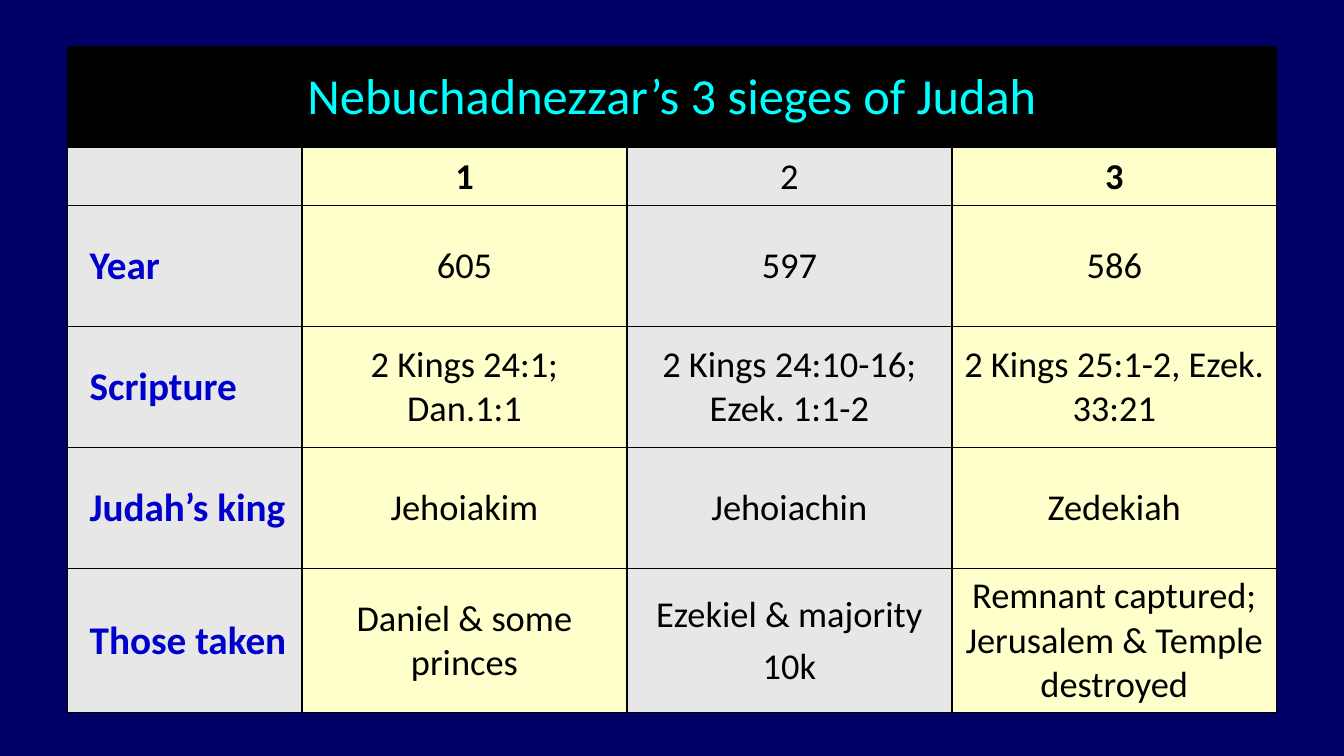
from dataclasses import dataclass

from lxml import etree
from pptx import Presentation
from pptx import util as u
from pptx.dml.color import RGBColor
from pptx.enum import text
from pptx.oxml import ns


@dataclass(frozen=True)
class Theme:
    """Colours, font and type sizes of the slide."""
    font: str = "Calibri"
    background: str = "000066"
    title_fill: str = "000000"
    title_ink: str = "00FFFF"
    grey: str = "E7E7E7"
    cream: str = "FFFFCC"
    label_ink: str = "0000CC"
    ink: str = "000000"
    border: str = "000000"
    title_size: int = 36
    label_size: int = 28
    body_size: int = 26


THEME = Theme()
TITLE = "Nebuchadnezzar’s 3 sieges of Judah"
SIEGES = [
    ("", "1", "2", "3"),
    ("Year", "605", "597", "586"),
    ("Scripture", "2 Kings 24:1; Dan.1:1", "2 Kings 24:10-16; Ezek. 1:1-2",
     "2 Kings 25:1-2, Ezek. 33:21"),
    ("Judah’s king", "Jehoiakim", "Jehoiachin", "Zedekiah"),
    ("Those taken", "Daniel & some princes", "Ezekiel & majority\n10k",
     "Remnant captured; Jerusalem & Temple destroyed"),
]
ROW_HEIGHTS = [2.54, 1.46, 3.05, 3.05, 3.05, 3.63]
LABEL_SHARE = 0.194


def draw_borders(cell):
    """Rule all four sides of a cell with a thin line."""
    properties = cell._tc.get_or_add_tcPr()
    for position, side in enumerate(("lnL", "lnR", "lnT", "lnB")):
        line = etree.Element(ns.qn(f"a:{side}"), w=str(u.Pt(1)))
        fill = etree.SubElement(line, ns.qn("a:solidFill"))
        etree.SubElement(fill, ns.qn("a:srgbClr"), val=THEME.border)
        properties.insert(position, line)


def fill_cell(cell, words, fill, ink, size, bold=False, align=text.PP_ALIGN.CENTER):
    """Write and style the words of one cell."""
    cell.fill.solid()
    cell.fill.fore_color.rgb = RGBColor.from_string(fill)
    cell.vertical_anchor = text.MSO_ANCHOR.MIDDLE
    cell.text = words
    for paragraph in cell.text_frame.paragraphs:
        paragraph.alignment = align
        paragraph.space_before = u.Pt(size * 0.2)
        paragraph.font.name = THEME.font
        paragraph.font.size = u.Pt(size)
        paragraph.font.bold = bold
        paragraph.font.color.rgb = RGBColor.from_string(ink)
    draw_borders(cell)


def add_siege_table(slide, left, top, width):
    """Place the titled table of sieges in the given box."""
    columns = len(SIEGES[0])
    table = slide.shapes.add_table(
        len(ROW_HEIGHTS), columns, u.Cm(left), u.Cm(top),
        u.Cm(width), u.Cm(sum(ROW_HEIGHTS))).table
    table.first_row = table.horz_banding = False
    label_width = width * LABEL_SHARE
    siege_width = (width - label_width) / (columns - 1)
    for index, column in enumerate(table.columns):
        column.width = u.Cm(siege_width if index else label_width)
    for row, height in zip(table.rows, ROW_HEIGHTS):
        row.height = u.Cm(height)

    for column in range(columns):
        fill_cell(table.cell(0, column), "" if column else TITLE,
                  THEME.title_fill, THEME.title_ink, THEME.title_size)
    table.cell(0, 0).merge(table.cell(0, columns - 1))

    for row, (label, *sieges) in enumerate(SIEGES, start=1):
        label_cell = table.cell(row, 0)
        fill_cell(label_cell, label, THEME.grey, THEME.label_ink,
                  THEME.label_size, True, text.PP_ALIGN.LEFT)
        label_cell.margin_left = u.Cm(0.56)
        for column, words in enumerate(sieges, start=1):
            odd = column % 2 == 1
            fill_cell(table.cell(row, column), words,
                      THEME.cream if odd else THEME.grey, THEME.ink,
                      THEME.body_size, row == 1 and odd)


def main():
    """Build the slide and save it."""
    deck = Presentation()
    deck.slide_width, deck.slide_height = u.Cm(33.87), u.Cm(19.05)
    slide = deck.slides.add_slide(deck.slide_layouts[6])
    slide.background.fill.solid()
    slide.background.fill.fore_color.rgb = RGBColor.from_string(THEME.background)
    add_siege_table(slide, left=1.7, top=1.18, width=30.48)
    deck.save("out.pptx")


if __name__ == "__main__":
    main()
